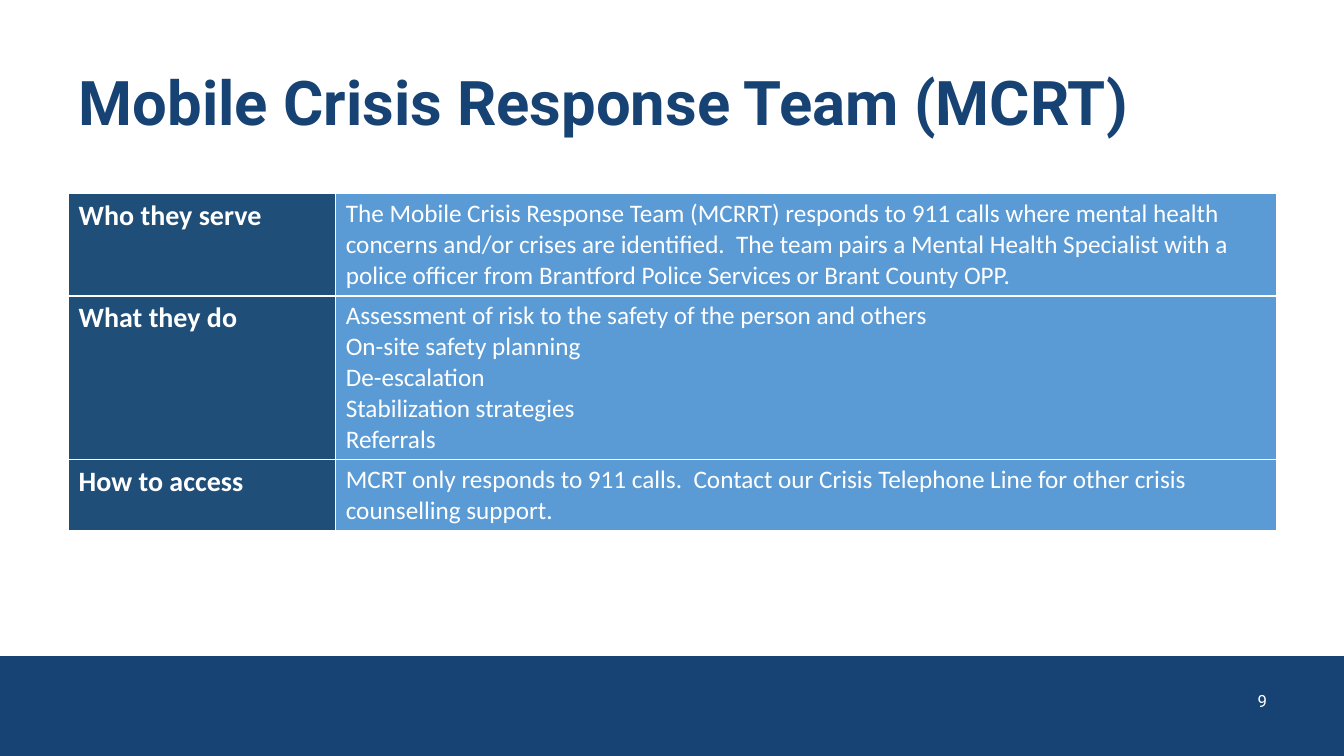
import pptx
import pptx.dml.color
import pptx.enum.shapes
import pptx.enum.text
import pptx.oxml
import pptx.oxml.ns
import pptx.util

Pt = pptx.util.Pt
RGBColor = pptx.dml.color.RGBColor
Align = pptx.enum.text.PP_ALIGN
Anchor = pptx.enum.text.MSO_ANCHOR

NAVY = RGBColor(0x17, 0x42, 0x74)
DARK = RGBColor(0x1F, 0x4E, 0x79)
BLUE = RGBColor(0x5B, 0x9B, 0xD5)
WHITE = RGBColor(0xFF, 0xFF, 0xFF)

ROWS = [
    (73.2, "Who they serve", [
        "The Mobile Crisis Response Team (MCRRT) responds to 911 calls where mental "
        "health concerns and/or crises are identified.  The team pairs a Mental Health "
        "Specialist with a police officer from Brantford Police Services or Brant County OPP.",
    ]),
    (117, "What they do", [
        "Assessment of risk to the safety of the person and others",
        "On-site safety planning",
        "De-escalation",
        "Stabilization strategies",
        "Referrals",
    ]),
    (50.4, "How to access", [
        "MCRT only responds to 911 calls.  Contact our Crisis Telephone Line for other "
        "crisis counselling support.",
    ]),
]


class Page:
    head = "Roboto"
    body = "Calibri"

    def __init__(self, deck):
        self.slide = deck.slides.add_slide(deck.slide_layouts[5])
        self.shapes = self.slide.shapes

    def text(self, frame, lines, font, size, color, bold=False, align=Align.LEFT):
        frame.word_wrap = True
        for i, line in enumerate(lines):
            para = frame.paragraphs[0] if i == 0 else frame.add_paragraph()
            para.alignment = align
            run = para.add_run()
            run.text = line
            run.font.name = font
            run.font.size = Pt(size)
            run.font.bold = bold
            run.font.color.rgb = color

    def place(self, shape, left, top, width, height):
        shape.left, shape.top = Pt(left), Pt(top)
        shape.width, shape.height = Pt(width), Pt(height)

    def title(self, words, *box):
        shape = self.shapes.title
        self.place(shape, *box)
        frame = shape.text_frame
        frame.vertical_anchor = Anchor.MIDDLE
        self.text(frame, [words], self.head, 44, NAVY, True)
        frame.paragraphs[0].line_spacing = 0.9

    def band(self, *box):
        shape = self.shapes.add_shape(
            pptx.enum.shapes.MSO_SHAPE.RECTANGLE, *map(Pt, box))
        shape.shadow.inherit = False
        shape.fill.solid()
        shape.fill.fore_color.rgb = NAVY
        shape.line.fill.background()

    def number(self, words, *box):
        frame = self.shapes.add_textbox(*map(Pt, box)).text_frame
        frame.vertical_anchor = Anchor.MIDDLE
        self.text(frame, [words], self.head, 12, WHITE, align=Align.RIGHT)

    def edge(self, cell):
        props = cell._tc.get_or_add_tcPr()
        for i, side in enumerate(("lnL", "lnR", "lnT", "lnB")):
            props.insert(i, pptx.oxml.parse_xml(
                f'<a:{side} {pptx.oxml.ns.nsdecls("a")} w="{Pt(1)}"><a:solidFill>'
                f'<a:srgbClr val="{WHITE}"/></a:solidFill></a:{side}>'))

    def cell(self, cell, lines, size, fill, bold):
        cell.fill.solid()
        cell.fill.fore_color.rgb = fill
        self.text(cell.text_frame, lines, self.body, size, WHITE, bold)
        self.edge(cell)

    def table(self, rows, left, top, widths):
        high = sum(row[0] for row in rows)
        grid = self.shapes.add_table(
            len(rows), len(widths), Pt(left), Pt(top), Pt(sum(widths)), Pt(high)).table
        grid.first_row = grid.horz_banding = False
        for col, width in zip(grid.columns, widths):
            col.width = Pt(width)
        for i, (height, label, lines) in enumerate(rows):
            grid.rows[i].height = Pt(height)
            self.cell(grid.cell(i, 0), [label], 20, DARK, True)
            self.cell(grid.cell(i, 1), lines, 18, BLUE, False)


def main():
    deck = pptx.Presentation()
    deck.slide_width, deck.slide_height = Pt(960), Pt(540)
    page = Page(deck)
    page.band(0, 468.7, 960, 71.3)
    page.title("Mobile Crisis Response Team (MCRT)", 49, 28.8, 862.6, 92.9)
    page.number("9", 878.4, 486, 33.8, 28.8)
    page.table(ROWS, 49, 138.2, [190.8, 671.8])
    deck.save("out.pptx")


if __name__ == "__main__":
    main()
